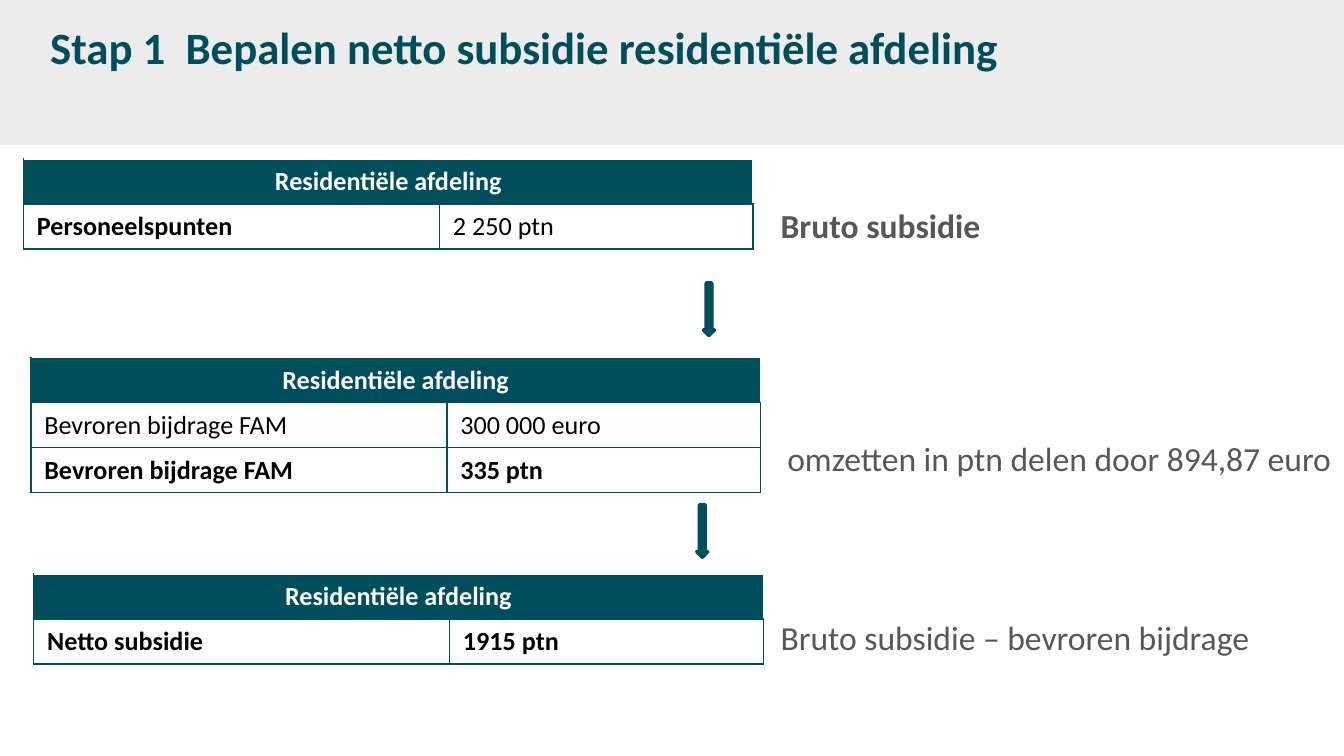
from dataclasses import dataclass

from lxml import etree
from pptx import Presentation
from pptx.dml.color import RGBColor
from pptx.enum.shapes import MSO_SHAPE
from pptx.enum.text import MSO_ANCHOR, MSO_AUTO_SIZE, PP_ALIGN
from pptx.oxml.ns import qn
from pptx.util import Emu, Pt

RECTANGLE = MSO_SHAPE.RECTANGLE
RIGHT_ARROW = MSO_SHAPE.RIGHT_ARROW
MIDDLE = MSO_ANCHOR.MIDDLE
CENTER = PP_ALIGN.CENTER
FIT_SHAPE = MSO_AUTO_SIZE.SHAPE_TO_FIT_TEXT

EMU_PER_PX = 4572  # 200 px to the inch
PAGE_WIDTH, PAGE_HEIGHT = 2000, 1125
COLUMN_WIDTHS = (619, 467)
ROW_HEIGHT = 67
ARROW_LENGTH, ARROW_THICKNESS = 78, 16
NOTE_HEIGHT = 80


@dataclass(frozen=True)
class Theme:
    font: str = "Calibri"
    teal: str = "004D5C"
    band: str = "ECECEC"
    gray: str = "575756"
    white: str = "FFFFFF"
    black: str = "000000"
    title_size: int = 24
    note_size: int = 18
    table_size: int = 14
    border_width: int = 1
    arrow_line: int = 2


THEME = Theme()


def px(length):
    return Emu(length * EMU_PER_PX)


def color(code):
    return RGBColor.from_string(code)


def add_span(para, text, size, code, bold=False):
    span = para.add_run()
    span.text = text
    span.font.name = THEME.font
    span.font.size = Pt(size)
    span.font.bold = bold
    span.font.color.rgb = color(code)


def add_text(page, left, top, width, height, text, size, code, bold=False, wrap=False):
    box = page.shapes.add_textbox(px(left), px(top), px(width), px(height))
    frame = box.text_frame
    frame.word_wrap = wrap
    add_span(frame.paragraphs[0], text, size, code, bold)
    return frame


def add_title(page, text):
    frame = add_text(page, 55, 0, 1622, 138, text, THEME.title_size, THEME.teal, bold=True, wrap=True)
    frame.vertical_anchor = MIDDLE


def add_note(page, left, top, width, text, bold=False):
    frame = add_text(page, left, top, width, NOTE_HEIGHT, text, THEME.note_size, THEME.gray, bold)
    frame.auto_size = FIT_SHAPE


def add_band(page):
    band = page.shapes.add_shape(RECTANGLE, 0, px(-4), px(PAGE_WIDTH), px(220))
    band.shadow.inherit = False
    band.fill.solid()
    band.fill.fore_color.rgb = color(THEME.band)
    band.line.fill.background()


def add_down_arrow(page, left, top):
    """Place a right arrow by its unrotated corner and turn it downwards."""
    arrow = page.shapes.add_shape(
        RIGHT_ARROW, px(left), px(top), px(ARROW_LENGTH), px(ARROW_THICKNESS))
    arrow.rotation = 90
    arrow.shadow.inherit = False
    arrow.fill.solid()
    arrow.fill.fore_color.rgb = color(THEME.teal)
    arrow.line.color.rgb = color(THEME.teal)
    arrow.line.width = Pt(THEME.arrow_line)


def set_borders(cell, left, right, top, bottom):
    """Draw the four cell borders; call before setting the cell's fill."""
    properties = cell._tc.get_or_add_tcPr()
    for side, code in zip("LRTB", (left, right, top, bottom)):
        line = etree.SubElement(properties, qn(f"a:ln{side}"), w=str(Pt(THEME.border_width)))
        fill = etree.SubElement(line, qn("a:solidFill"))
        etree.SubElement(fill, qn("a:srgbClr"), val=code)


def style_header(table, text):
    first, last = table.cell(0, 0), table.cell(0, 1)
    first.merge(last)
    for cell in (first, last):
        set_borders(cell, THEME.teal, THEME.white, THEME.white, THEME.teal)
        cell.fill.solid()
        cell.fill.fore_color.rgb = color(THEME.teal)
    para = first.text_frame.paragraphs[0]
    para.alignment = CENTER
    add_span(para, text, THEME.table_size, THEME.white, bold=True)


def add_subsidy_table(page, left, top, rows):
    """Add a titled two-column table; each row holds (text, bold) pairs."""
    count = len(rows) + 1
    table = page.shapes.add_table(
        count, len(COLUMN_WIDTHS), px(left), px(top),
        px(sum(COLUMN_WIDTHS)), px(ROW_HEIGHT * count)).table
    table.horz_banding = False
    for column, width in zip(table.columns, COLUMN_WIDTHS):
        column.width = px(width)
    for row in table.rows:
        row.height = px(ROW_HEIGHT)
    style_header(table, "Residentiële afdeling")
    for row_index, row in enumerate(rows, start=1):
        for column_index, (text, bold) in enumerate(row):
            cell = table.cell(row_index, column_index)
            set_borders(cell, *[THEME.teal] * 4)
            cell.fill.background()
            add_span(cell.text_frame.paragraphs[0], text, THEME.table_size, THEME.black, bold)


def main():
    deck = Presentation()
    deck.slide_width, deck.slide_height = px(PAGE_WIDTH), px(PAGE_HEIGHT)
    page = deck.slides.add_slide(deck.slide_layouts[6])

    add_band(page)
    add_title(page, "Stap 1  Bepalen netto subsidie residentiële afdeling")

    add_subsidy_table(page, 35, 237, [
        [("Personeelspunten", True), ("2 250 ptn", False)],
    ])
    add_note(page, 1142, 295, 352, "Bruto subsidie", bold=True)
    add_down_arrow(page, 1016, 452)

    add_subsidy_table(page, 46, 532, [
        [("Bevroren bijdrage FAM", False), ("300 000 euro", False)],
        [("Bevroren bijdrage FAM", True), ("335 ptn", True)],
    ])
    add_note(page, 1152, 642, 854, "omzetten in ptn delen door 894,87 euro")
    add_down_arrow(page, 1006, 782)

    add_subsidy_table(page, 50, 854, [
        [("Netto subsidie", True), ("1915 ptn", True)],
    ])
    add_note(page, 1142, 908, 758, "Bruto subsidie – bevroren bijdrage")

    deck.save("out.pptx")


if __name__ == "__main__":
    main()
